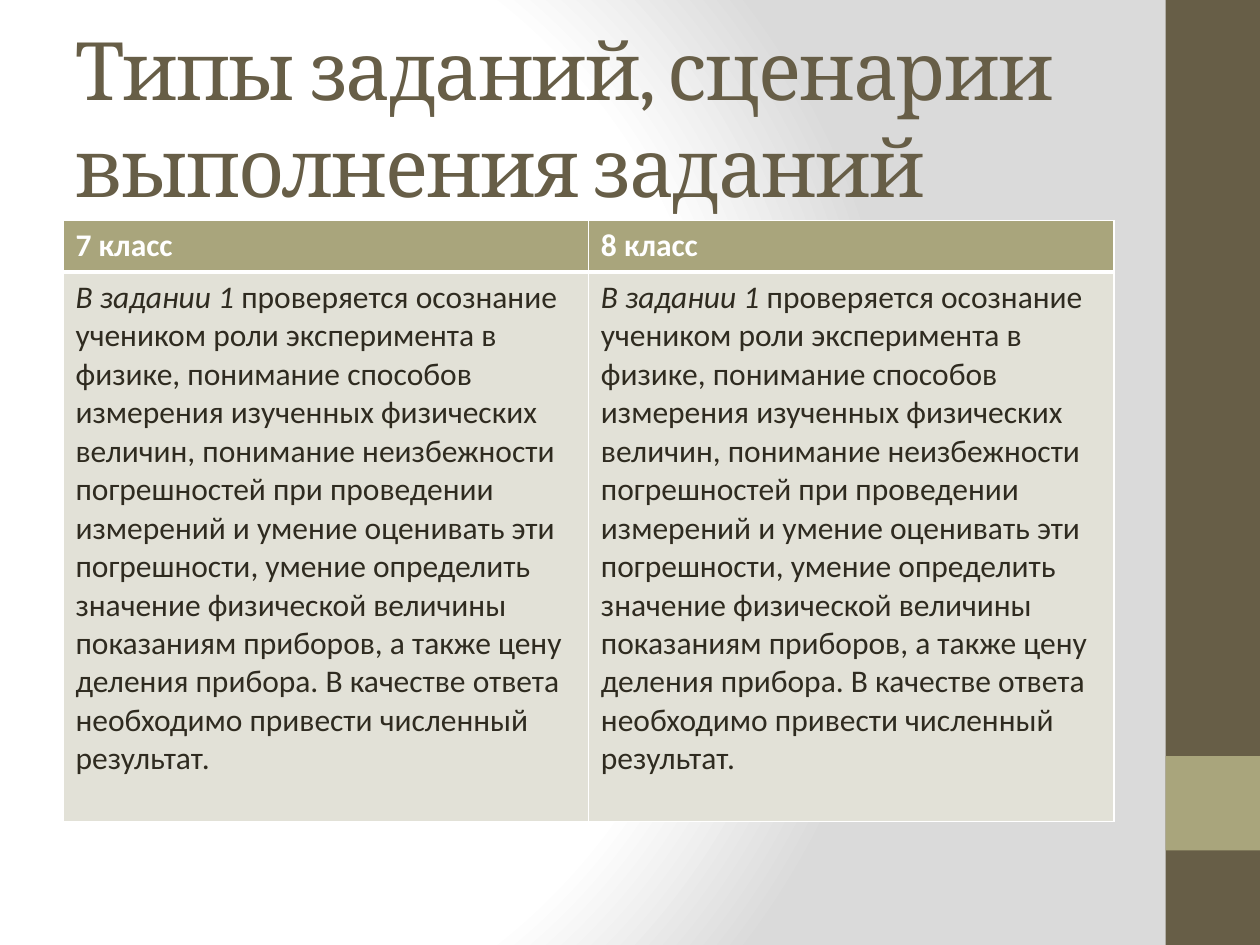
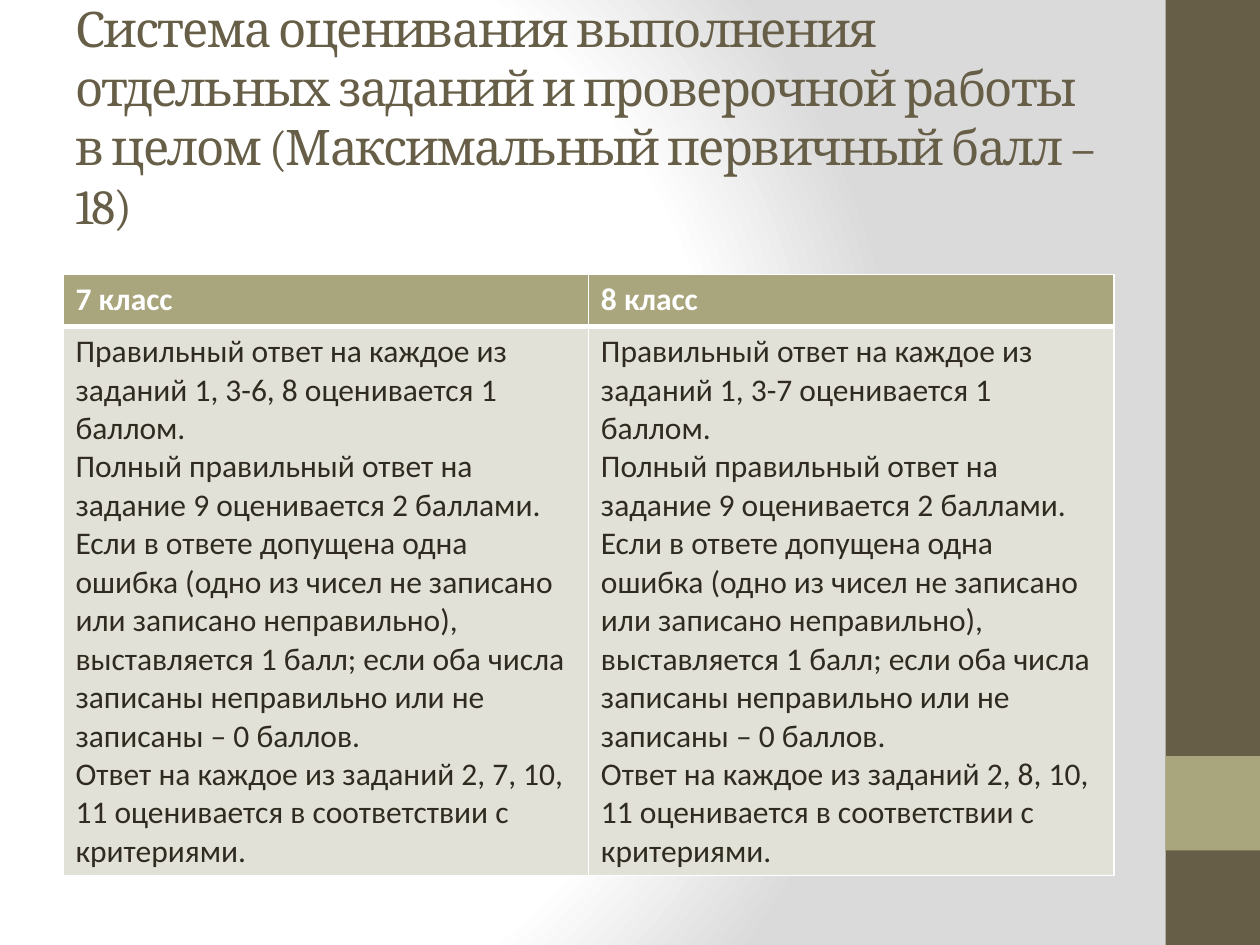
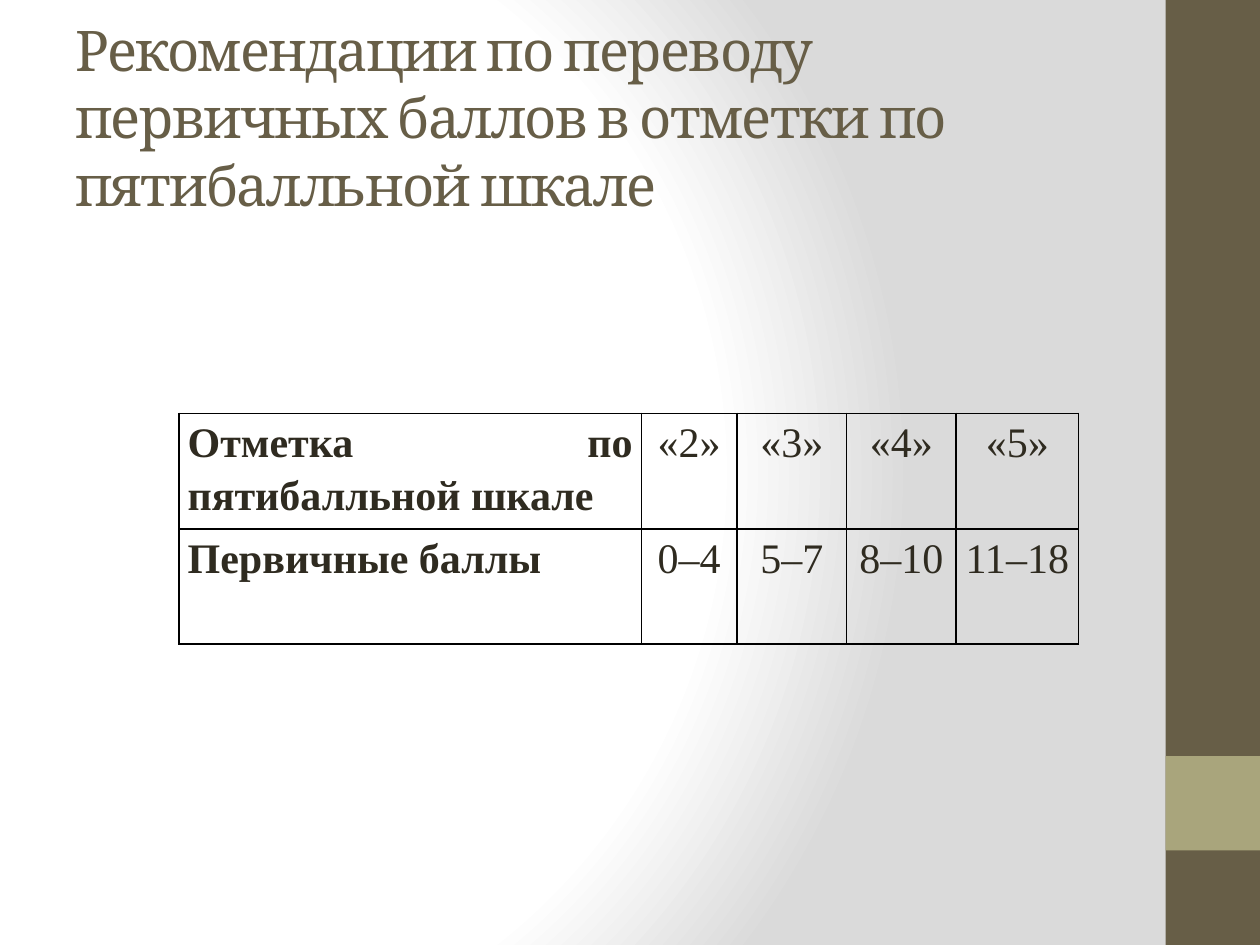
from dataclasses import dataclass

from lxml import etree
from pptx import Presentation
from pptx import util as u
from pptx.dml.color import RGBColor
from pptx.enum import shapes, text
from pptx.oxml import ns, parse_xml


@dataclass(frozen=True)
class Theme:
    brown: str = "675E47"
    olive: str = "A9A57C"
    pale: str = "E2E1D7"
    ink: str = "2F2B20"
    white: str = "FFFFFF"
    black: str = "000000"
    grey: str = "DADADA"
    title_font: str = "Cambria"
    body_font: str = "Calibri"
    grid_font: str = "Times New Roman"
    body_size: int = 18
    grid_size: int = 24
    title_large: int = 46
    title_medium: int = 32
    title_small: int = 28


class Slides:
    def __init__(self, theme):
        self.theme = theme
        self.deck = Presentation()
        self.deck.slide_width = u.Inches(10)
        self.deck.slide_height = u.Inches(7.5)
        self.page = None
        self.paint_background()

    def paint_background(self):
        master = self.deck.slide_master
        master.background.fill.solid()
        stops = ((0, self.theme.white), (75, self.theme.white), (100, self.theme.grey))
        stop_xml = "".join(
            f'<a:gs pos="{percent * 1000}"><a:srgbClr val="{color}"/></a:gs>'
            for percent, color in stops
        )
        gradient = parse_xml(
            f'<a:gradFill {ns.nsdecls("a")} rotWithShape="1"><a:gsLst>{stop_xml}</a:gsLst>'
            '<a:path path="circle"><a:fillToRect l="20000" t="50000" r="100000" b="50000"/>'
            "</a:path></a:gradFill>"
        )
        properties = master.element.xpath("./p:cSld/p:bg/p:bgPr")[0]
        properties.replace(properties[0], gradient)

    def add_page(self, title, size):
        self.page = self.deck.slides.add_slide(self.deck.slide_layouts[6])
        self.add_band(0, 7.5, self.theme.brown)
        self.add_band(6, 0.75, self.theme.olive)
        self.add_title(title, size)

    def add_band(self, top, height, color):
        band = self.page.shapes.add_shape(
            shapes.MSO_SHAPE.RECTANGLE,
            u.Inches(9.25), u.Inches(top), u.Inches(0.75), u.Inches(height),
        )
        band.shadow.inherit = False
        band.fill.solid()
        band.fill.fore_color.rgb = RGBColor.from_string(color)
        band.line.fill.background()

    def add_title(self, title, size):
        box = self.page.shapes.add_textbox(
            u.Inches(0.5), u.Inches(0.3), u.Inches(8.33), u.Inches(1.25)
        )
        frame = box.text_frame
        frame.word_wrap = True
        frame.vertical_anchor = text.MSO_ANCHOR.MIDDLE
        span = self.add_span(
            frame.paragraphs[0], title, self.theme.title_font, size, self.theme.brown
        )
        span.font._element.set("spc", "-100")

    def add_span(self, para, words, font, size, color, bold=False, italic=False):
        span = para.add_run()
        span.text = words
        span.font.name = font
        span.font.size = u.Pt(size)
        span.font.color.rgb = RGBColor.from_string(color)
        span.font.bold = bold
        span.font.italic = italic
        return span

    def add_table(self, left, top, columns, rows):
        table = self.page.shapes.add_table(
            len(rows), len(columns), u.Inches(left), u.Inches(top),
            u.Inches(sum(columns)), u.Inches(sum(rows)),
        ).table
        table.first_row = False
        table.horz_banding = False
        for column, width in zip(table.columns, columns):
            column.width = u.Inches(width)
        for row, height in zip(table.rows, rows):
            row.height = u.Inches(height)
        return table

    def style_cell(self, cell, border, fill=None, top=1, bottom=1):
        properties = cell._tc.get_or_add_tcPr()
        for side, width in (("L", 1), ("R", 1), ("T", top), ("B", bottom)):
            line = etree.SubElement(properties, ns.qn(f"a:ln{side}"), w=str(u.Pt(width)))
            solid = etree.SubElement(line, ns.qn("a:solidFill"))
            etree.SubElement(solid, ns.qn("a:srgbClr"), val=border)
        if fill:
            cell.fill.solid()
            cell.fill.fore_color.rgb = RGBColor.from_string(fill)
        else:
            cell.fill.background()

    def add_class_table(self, top, classes):
        theme = self.theme
        table = self.add_table(0.5, top, (4.17, 4.17), (0.41, 4.36))
        for column, (heading, paragraphs) in enumerate(classes):
            header, body = table.cell(0, column), table.cell(1, column)
            self.style_cell(header, theme.white, theme.olive, bottom=3)
            self.style_cell(body, theme.white, theme.pale, top=3)
            self.add_span(
                header.text_frame.paragraphs[0], heading,
                theme.body_font, theme.body_size, theme.white, bold=True,
            )
            for index, spans in enumerate(paragraphs):
                frame = body.text_frame
                para = frame.add_paragraph() if index else frame.paragraphs[0]
                for words, italic in spans:
                    self.add_span(
                        para, words, theme.body_font, theme.body_size, theme.ink, italic=italic
                    )

    def add_marks_table(self, rows):
        theme = self.theme
        table = self.add_table(1.42, 3.28, (3.67, 0.76, 0.87, 0.87, 0.97), (0.91, 0.91))
        for row, values in enumerate(rows):
            for column, value in enumerate(values):
                cell = table.cell(row, column)
                self.style_cell(cell, theme.black)
                cell.margin_left = cell.margin_right = u.Inches(0.07)
                cell.margin_top = cell.margin_bottom = 0
                label = column == 0
                para = cell.text_frame.paragraphs[0]
                para.alignment = text.PP_ALIGN.JUSTIFY if label else text.PP_ALIGN.CENTER
                para.line_spacing = 1.15
                self.add_span(
                    para, value, theme.grid_font, theme.grid_size, theme.ink, bold=label
                )


TASK_ONE = [[
    ("В задании 1", True),
    (
        " проверяется осознание учеником роли эксперимента в физике, понимание способов "
        "измерения изученных физических величин, понимание неизбежности погрешностей при "
        "проведении измерений и умение оценивать эти погрешности, умение определить значение "
        "физической величины показаниям приборов, а также цену деления прибора. В качестве "
        "ответа необходимо привести численный результат.",
        False,
    ),
]]


def scoring(single_point_tasks, criteria_tasks):
    sentences = (
        f"Правильный ответ на каждое из заданий {single_point_tasks} оценивается 1 баллом.",
        "Полный правильный ответ на задание 9 оценивается 2 баллами. Если в ответе допущена "
        "одна ошибка (одно из чисел не записано или записано неправильно), выставляется "
        "1 балл; если оба числа записаны неправильно или не записаны – 0 баллов.",
        f"Ответ на каждое из заданий {criteria_tasks} оценивается в соответствии с критериями.",
    )
    return [[(sentence, False)] for sentence in sentences]


def main():
    theme = Theme()
    slides = Slides(theme)

    slides.add_page("Типы заданий, сценарии выполнения заданий", theme.title_large)
    slides.add_class_table(1.75, [("7 класс", TASK_ONE), ("8 класс", TASK_ONE)])

    slides.add_page(
        "Система оценивания выполнения отдельных заданий и проверочной работы в целом "
        "(Максимальный первичный балл – 18)",
        theme.title_small,
    )
    slides.add_class_table(2.18, [
        ("7 класс", scoring("1, 3-6, 8", "2, 7, 10, 11")),
        ("8 класс", scoring("1, 3-7", "2, 8, 10, 11")),
    ])

    slides.add_page(
        "Рекомендации по переводу первичных баллов в отметки по пятибалльной шкале",
        theme.title_medium,
    )
    slides.add_marks_table([
        ("Отметка по пятибалльной шкале", "«2»", "«3»", "«4»", "«5»"),
        ("Первичные баллы", "0–4", "5–7", "8–10", "11–18"),
    ])

    slides.deck.save("out.pptx")


if __name__ == "__main__":
    main()
